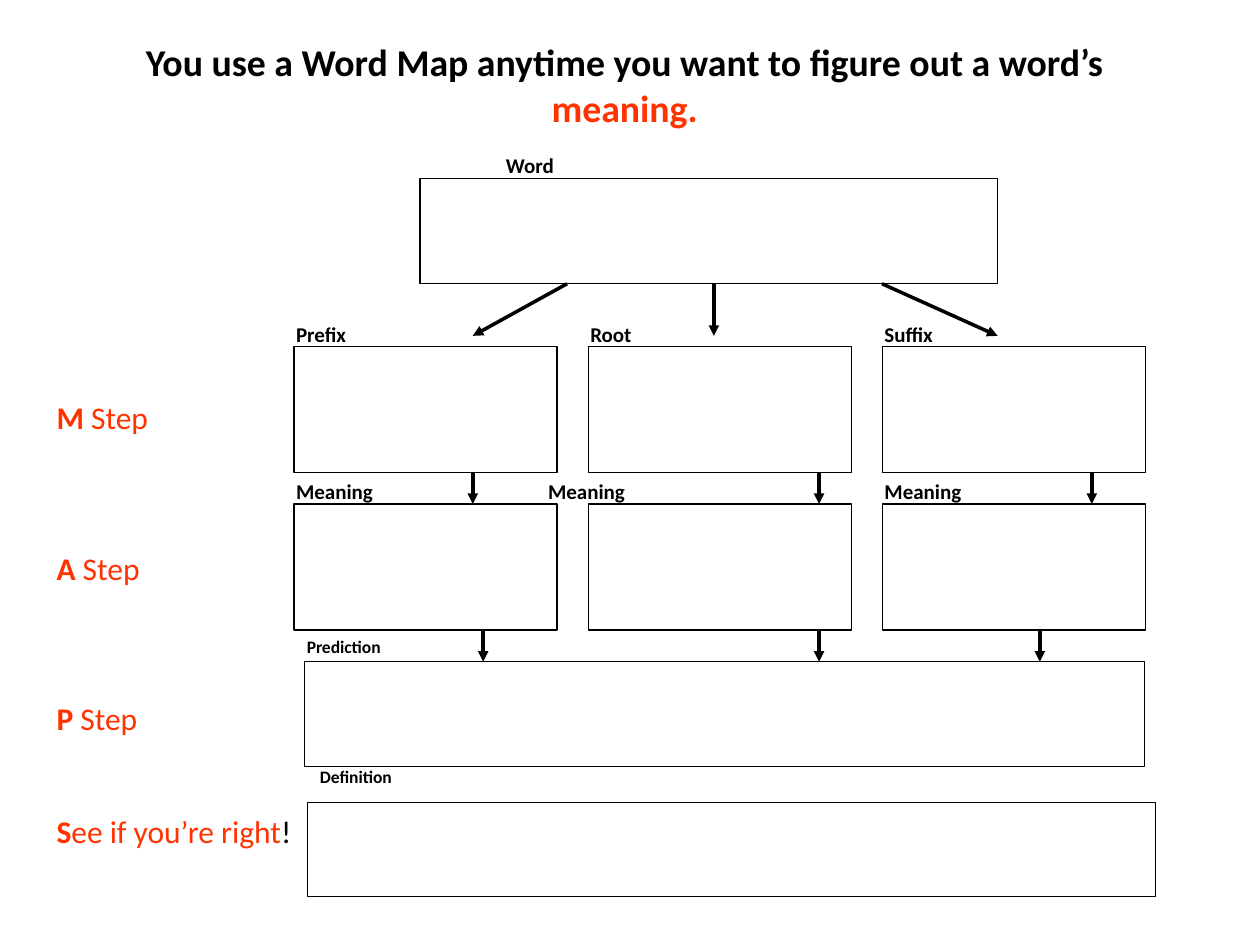
"""Build the Word Map slide."""
from lxml import etree
from pptx import Presentation
from pptx.dml.color import RGBColor
from pptx.enum.shapes import MSO_CONNECTOR, MSO_SHAPE
from pptx.enum.text import MSO_ANCHOR, MSO_AUTO_SIZE, PP_ALIGN
from pptx.oxml.ns import qn
from pptx.util import Cm, Pt

BLACK = RGBColor(0x00, 0x00, 0x00)
ORANGE = RGBColor(0xFF, 0x33, 0x00)
FONT = "Calibri"
RECTANGLE = MSO_SHAPE.RECTANGLE
STRAIGHT = MSO_CONNECTOR.STRAIGHT
TOP, MIDDLE = MSO_ANCHOR.TOP, MSO_ANCHOR.MIDDLE
LEFT, CENTER = PP_ALIGN.LEFT, PP_ALIGN.CENTER
NO_FIT = MSO_AUTO_SIZE.NONE

COLUMNS = [5.93 * number for number in (1, 2, 3)]
CELL_WIDTH, CELL_HEIGHT = 5.3, 2.54
PARTS_TOP, MEANINGS_TOP, PREDICTION_TOP = 6.99, 10.16, 13.34
WORD_BOTTOM = 5.72
LABEL_WIDTH, LABEL_HEIGHT = 2.54, 0.85
LABEL_SHIFT, LABEL_RISE = 0.21, 0.64


def place(shape, left, top, width, height):
    """Move and size a shape, in centimetres."""
    shape.left, shape.top = Cm(left), Cm(top)
    shape.width, shape.height = Cm(width), Cm(height)


def write(shape, paragraphs, size=12, align=LEFT, anchor=TOP, gaps=(0,)):
    """Fill a shape with paragraphs of (text, colour, bold) spans."""
    frame = shape.text_frame
    frame.word_wrap = True
    frame.auto_size = NO_FIT
    frame.vertical_anchor = anchor
    for number, (spans, gap) in enumerate(zip(paragraphs, gaps)):
        para = frame.add_paragraph() if number else frame.paragraphs[0]
        para.alignment = align
        para.space_before = Pt(gap)
        properties = para._p.get_or_add_pPr()
        properties.set("marL", "0")
        properties.set("indent", "0")
        etree.SubElement(properties, qn("a:buNone"))
        for text, color, bold in spans:
            if text == "\n":
                para.add_line_break()
                continue
            span = para.add_run()
            span.text = text
            span.font.name = FONT
            span.font.size = Pt(size)
            span.font.bold = bold
            span.font.color.rgb = color


def add_label(slide, text, left, top, size=12, holder=None):
    """Write a bold label in a new text box or a given placeholder."""
    box = holder or slide.shapes.add_textbox(0, 0, 0, 0)
    place(box, left, top, LABEL_WIDTH, LABEL_HEIGHT)
    write(box, [[(text, BLACK, True)]], size=size)


def add_box(slide, left, top, width, height):
    """Draw an empty outlined answer box."""
    box = slide.shapes.add_shape(RECTANGLE, Cm(left), Cm(top), Cm(width), Cm(height))
    box.shadow.inherit = False
    box.fill.background()
    box.line.color.rgb = BLACK
    box.line.width = Pt(0.75)


def add_arrow(slide, start_x, start_y, end_x, end_y):
    """Draw a black arrow between two points."""
    arrow = slide.shapes.add_connector(
        STRAIGHT, Cm(start_x), Cm(start_y), Cm(end_x), Cm(end_y))
    arrow.line.color.rgb = BLACK
    arrow.line.width = Pt(2)
    etree.SubElement(arrow.line._get_or_add_ln(), qn("a:tailEnd"), type="triangle")
    etree.SubElement(arrow._element.spPr, qn("a:effectLst"))


def add_title(slide):
    """Write the two-line title."""
    title = slide.shapes.title
    place(title, 1.9, 0.64, 21.39, 2.12)
    spans = [("You use a Word Map anytime you want to figure out a word’s", BLACK, True),
             ("\n", BLACK, True), ("meaning.", ORANGE, True)]
    write(title, [spans], size=21.6, align=CENTER, anchor=MIDDLE)


def add_steps(slide):
    """List the MAPS steps beside the rows of the map."""
    box = slide.shapes.add_textbox(Cm(0.89), Cm(7.9), Cm(5.31), Cm(9.5))
    steps = [[(letter, ORANGE, True), (rest, ORANGE, False)]
             for letter, rest in (("M", " Step"), ("A", " Step"), ("P", " Step"),
                                  ("S", "ee if you’re right"))]
    steps[-1].append(("!", BLACK, False))
    write(box, steps, size=18, gaps=(0, 64.5, 64.5, 43))


def add_map(slide):
    """Draw the boxes, labels and arrows of the word map."""
    add_box(slide, 8.47, 3.6, 11.64, 2.12)
    add_label(slide, "Word", 9.95, 2.96)
    label_columns = [column - LABEL_SHIFT for column in COLUMNS]
    meaning_columns = [label_columns[0], 10.8, label_columns[2]]
    rows = ((PARTS_TOP, ("Prefix", "Root", "Suffix"), label_columns),
            (MEANINGS_TOP, ("Meaning",) * 3, meaning_columns))
    for top, names, lefts in rows:
        for column, name, left in zip(COLUMNS, names, lefts):
            add_box(slide, column, top, CELL_WIDTH, CELL_HEIGHT)
            add_label(slide, name, left, top - LABEL_RISE)

    add_box(slide, 6.14, PREDICTION_TOP, 16.93, 2.12)
    add_label(slide, "Prediction", 5.93, 12.7, size=10, holder=slide.placeholders[1])
    add_box(slide, 6.2, 16.18, 17.09, 1.9)
    add_label(slide, "Definition", 6.2, 15.32, size=10)

    for start, end in ((11.43, 9.53), (14.39, 14.39), (17.78, 20.11)):
        add_arrow(slide, start, WORD_BOTTOM, end, 6.77)
    for bottom, places in ((MEANINGS_TOP, (9.53, 16.51, 22.01)),
                           (PREDICTION_TOP, (9.74, 16.51, 20.96))):
        for across in places:
            add_arrow(slide, across, bottom - LABEL_RISE, across, bottom)


def main():
    """Create and save the deck."""
    deck = Presentation()
    deck.slide_width, deck.slide_height = Cm(25.4), Cm(19.05)
    page = deck.slides.add_slide(deck.slide_layouts[1])
    add_title(page)
    add_map(page)
    add_steps(page)
    deck.save("out.pptx")


if __name__ == "__main__":
    main()
